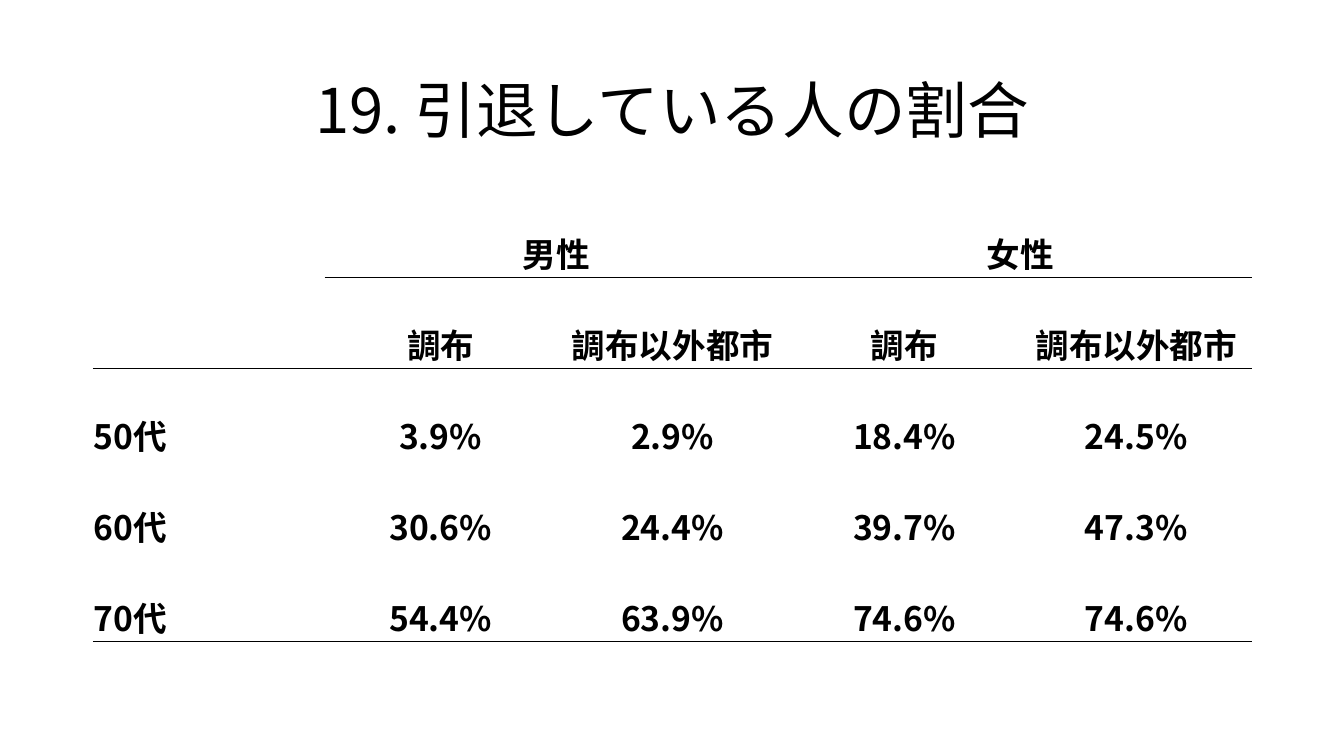
from pptx import Presentation
from pptx.util import Inches, Pt
from pptx.dml.color import RGBColor
from pptx.enum.text import PP_ALIGN, MSO_ANCHOR
from pptx.oxml import parse_xml
from pptx.oxml.ns import nsdecls
from lxml.etree import SubElement

TITLE = "19. 引退している人の割合"
ROWS = [
    ["", "男性", "", "女性", ""],
    ["", "調布", "調布以外都市", "調布", "調布以外都市"],
    ["50代", "3.9%", "2.9%", "18.4%", "24.5%"],
    ["60代", "30.6%", "24.4%", "39.7%", "47.3%"],
    ["70代", "54.4%", "63.9%", "74.6%", "74.6%"],
]
SPANS = [(0, 1), (0, 3)]
RULES = {1: 1, 2: 0, 5: 0}
WIDE, HIGH = 13.33, 7.5
LEFT, BODY = 0.92, 11.5
FACE, INK = "Noto Sans CJK JP", "000000"
HEAD = {"size": Pt(44), "bold": False, "name": FACE}
CELL = {"size": Pt(24), "bold": True, "name": FACE}
INSET = {"margin_left": Inches(0.01), "margin_right": Inches(0.01),
         "margin_top": Inches(0.01), "margin_bottom": 0,
         "vertical_anchor": MSO_ANCHOR.BOTTOM}
PLAIN = {"first_row": False, "horz_banding": False}


def color(code):
    """Turn a hex string into a colour."""
    return RGBColor.from_string(code)


def apply(item, style):
    """Set each value of a style on an item."""
    for key, value in style.items():
        setattr(item, key, value)


def write(frame, text, style, align):
    """Write one formatted line into a text frame."""
    line = frame.paragraphs[0]
    line.alignment = align
    run = line.add_run()
    run.text = text
    apply(run.font, style)
    run.font.color.rgb = color(INK)
    SubElement(run.font._element, "{http://schemas.openxmlformats.org/drawingml/2006/main}ea",
               typeface=FACE)
    return line


def border(cell, side, shown):
    """Add a thin or empty border to one side of a cell."""
    fill = (f'<a:solidFill><a:srgbClr val="{INK}"/></a:solidFill>'
            if shown else "<a:noFill/>")
    return parse_xml(f'<a:ln{side} {nsdecls("a")} w="{Pt(0.5)}">{fill}</a:ln{side}>')


def ruled(edge, col):
    """Tell whether a line runs along a row edge in a column."""
    return edge in RULES and col >= RULES[edge]


def title(slide):
    """Add the slide title."""
    box = slide.shapes.add_textbox(*map(Inches, (LEFT, 0.4, BODY, 1.45)))
    frame = box.text_frame
    apply(frame, {"word_wrap": True, "vertical_anchor": MSO_ANCHOR.MIDDLE})
    write(frame, TITLE, HEAD, PP_ALIGN.CENTER).line_spacing = 0.9


def table(slide):
    """Add the table of shares by age, sex and city."""
    size = map(Inches, (LEFT, 1.85, BODY, 4.51))
    grid = slide.shapes.add_table(len(ROWS), len(ROWS[0]), *size).table
    apply(grid, PLAIN)
    for row, texts in enumerate(ROWS):
        for col, text in enumerate(texts):
            cell = grid.cell(row, col)
            apply(cell, INSET)
            cell.fill.background()
            if text:
                align = PP_ALIGN.CENTER if col else PP_ALIGN.LEFT
                write(cell.text_frame, text, CELL, align)
            sides = {"L": False, "R": False,
                     "T": ruled(row, col), "B": ruled(row + 1, col)}
            for spot, (side, shown) in enumerate(sides.items()):
                cell._tc.get_or_add_tcPr().insert(spot, border(cell, side, shown))
    for row, col in SPANS:
        grid.cell(row, col).merge(grid.cell(row, col + 1))


def main():
    """Build and save the slide."""
    deck = Presentation()
    apply(deck, {"slide_width": Inches(WIDE), "slide_height": Inches(HIGH)})
    slide = deck.slides.add_slide(deck.slide_layouts[6])
    title(slide)
    table(slide)
    deck.save("out.pptx")


if __name__ == "__main__":
    main()
